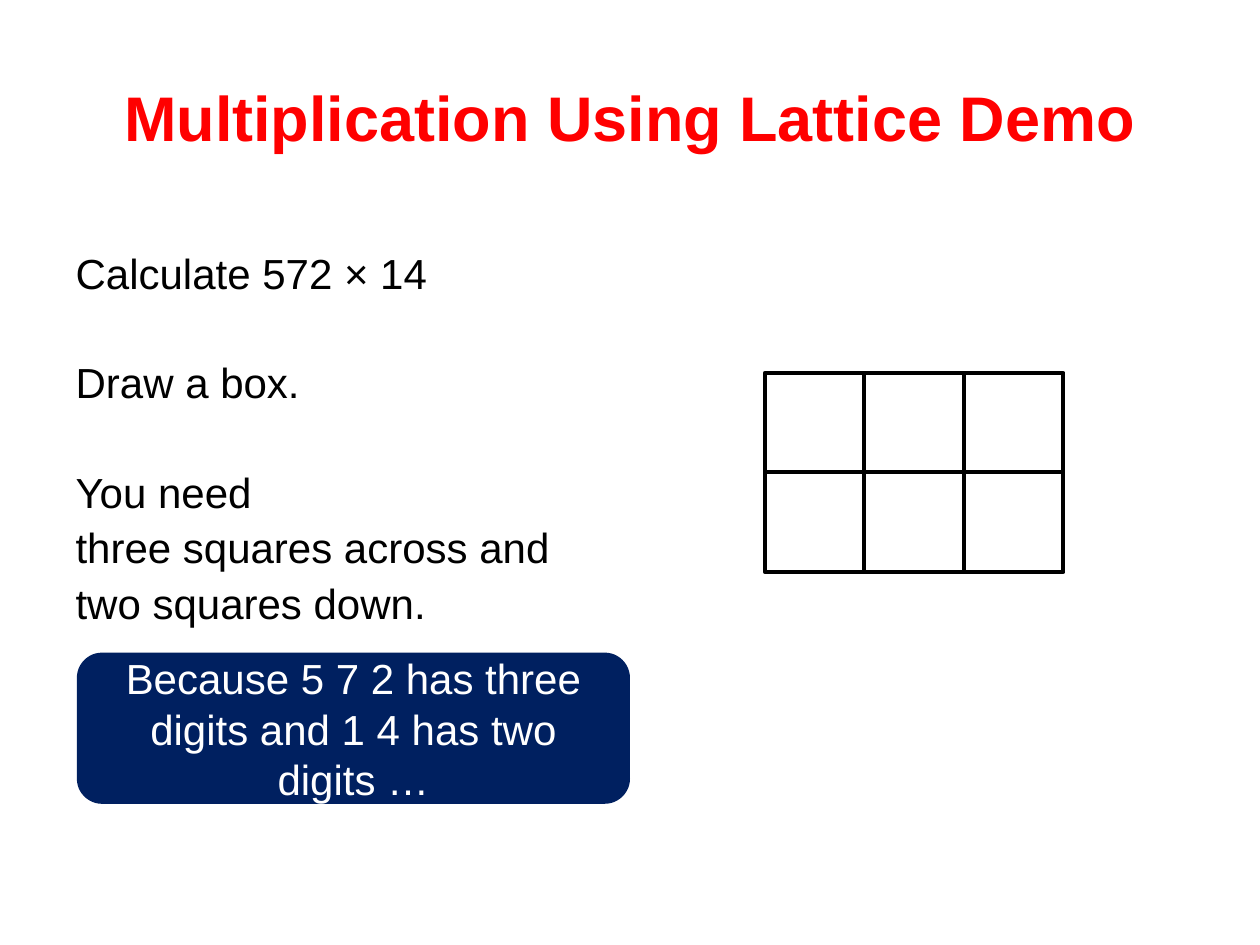
from pptx import Presentation
from pptx.dml.color import RGBColor
from pptx.enum.shapes import MSO_SHAPE as Shape
from pptx.enum.text import MSO_ANCHOR as Anchor, MSO_AUTO_SIZE as AutoSize, PP_ALIGN as Align
from pptx.util import Inches, Pt
from lxml.etree import SubElement
from pptx.oxml.ns import qn

# Content
TITLE = "Multiplication Using Lattice Demo"
LINE_GAP, STEP_GAP = 5.8, 36.5  # points before a line / before a new step
STEPS = [
    ("Calculate 572 × 14", 0),
    ("Draw a box.", STEP_GAP),
    ("You need", STEP_GAP),
    ("three squares across and", LINE_GAP),
    ("two squares down.", LINE_GAP),
]
REASON = "Because 5 7 2 has three digits and 1 4 has two digits …"
COLUMNS, ROWS = 3, 2

# Style
FONT = "Arial"
RED = RGBColor(0xFF, 0x00, 0x00)
BLACK = RGBColor(0x00, 0x00, 0x00)
NAVY = RGBColor(0x00, 0x20, 0x60)
WHITE = RGBColor(0xFF, 0xFF, 0xFF)
LATTICE_LEFT, LATTICE_TOP, SQUARE = 6.07, 2.96, 0.79


def place(shape, left, top, width, height):
    shape.left, shape.top = Inches(left), Inches(top)
    shape.width, shape.height = Inches(width), Inches(height)


def style(paragraph, size, color, bold=False):
    font = paragraph.font
    font.name, font.size, font.bold = FONT, Pt(size), bold
    font.color.rgb = color


def add_box(slide, kind, left, top, width, height):
    box = slide.shapes.add_shape(kind, Inches(left), Inches(top), Inches(width), Inches(height))
    box.shadow.inherit = False
    return box


presentation = Presentation()
presentation.slide_width, presentation.slide_height = Inches(10), Inches(7.5)
slide = presentation.slides.add_slide(presentation.slide_layouts[1])

# Title
title = slide.shapes.title
place(title, 0.47, 0.3, 9.06, 1.25)
title.text_frame.text = TITLE
title.text_frame.vertical_anchor = Anchor.MIDDLE
title.text_frame.paragraphs[0].alignment = Align.CENTER
style(title.text_frame.paragraphs[0], 36, RED, bold=True)

# Steps
steps = slide.placeholders[1]
place(steps, 0.5, 1.96, 9, 3.2)
steps.text_frame.text = "\n".join(text for text, _ in STEPS)
steps.text_frame.auto_size = AutoSize.NONE
for paragraph, (_, gap) in zip(steps.text_frame.paragraphs, STEPS):
    paragraph.line_spacing = 0.9
    paragraph.space_before = Pt(gap)
    properties = paragraph._p.get_or_add_pPr()
    properties.set("marL", "0")
    properties.set("indent", "0")
    SubElement(properties, qn("a:buNone"))
    style(paragraph, 24, BLACK)

# Lattice
for row in range(ROWS):
    for column in range(COLUMNS):
        square = add_box(slide, Shape.RECTANGLE, LATTICE_LEFT + column * SQUARE,
                         LATTICE_TOP + row * SQUARE, SQUARE, SQUARE)
        square.fill.background()
        square.line.color.rgb = BLACK
        square.line.width = Pt(2.25)

# Reason
reason = add_box(slide, Shape.ROUNDED_RECTANGLE, 0.61, 5.18, 4.39, 1.2)
reason.fill.solid()
reason.fill.fore_color.rgb = NAVY
reason.line.fill.background()
reason.text_frame.text = REASON
reason.text_frame.word_wrap = True
reason.text_frame.vertical_anchor = Anchor.MIDDLE
reason.text_frame.paragraphs[0].alignment = Align.CENTER
style(reason.text_frame.paragraphs[0], 24, WHITE)

presentation.save("out.pptx")
